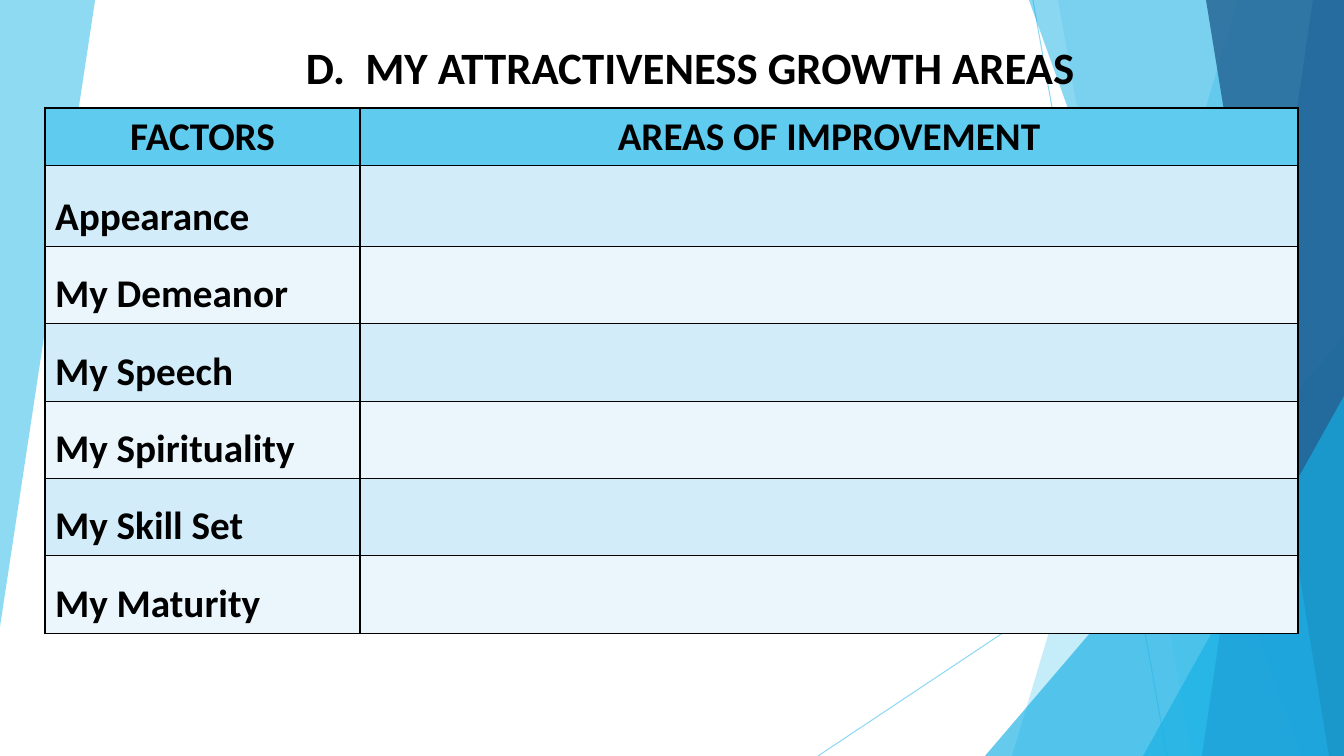
from lxml import etree
from pptx import Presentation
from pptx.dml.color import RGBColor
from pptx.enum import shapes, text
from pptx.oxml import ns
from pptx.util import Emu, Pt

# Content
TITLE = "D.  MY ATTRACTIVENESS GROWTH AREAS"
HEADERS = ("FACTORS", "AREAS OF IMPROVEMENT")
FACTORS = ("Appearance", "My Demeanor", "My Speech",
           "My Spirituality", "My Skill Set", "My Maturity")

BLACK = RGBColor(0x00, 0x00, 0x00)
SKY = RGBColor(0x5F, 0xCB, 0xEF)
CYAN = RGBColor(0x17, 0xB0, 0xE4)
BLUE = RGBColor(0x2E, 0x83, 0xC3)
NAVY = RGBColor(0x22, 0x62, 0x92)
BANDS = (RGBColor(0xD2, 0xEC, 0xF9), RGBColor(0xEA, 0xF6, 0xFC))

# Geometry in px
WIDTH, HEIGHT = 1344, 756
TITLE_BOX = (38, 35, 1305, 65)
TABLE_LEFT, TABLE_TOP = 45, 108
COLUMNS = (315, 938)
ROW_TOPS = (108, 165, 246, 323, 401, 478, 555, 633)

# Background facets, back to front: kind, points or box, colour, opacity in %
FACETS = (
    ("polygon", ((0, 0), (95, 0), (95, 1), (0, 627)), SKY, 70),
    ("line", (1033, 0, 1167, HEIGHT), SKY, 70),
    ("line", (WIDTH, 406, 818, HEIGHT), SKY, 70),
    ("polygon", ((1238, 0), (WIDTH, 0), (WIDTH, HEIGHT), (1012, HEIGHT)), SKY, 36),
    ("polygon", ((1058, 0), (WIDTH, 0), (WIDTH, HEIGHT), (1192, HEIGHT)), SKY, 20),
    ("triangle", (985, 336, 359, 420), CYAN, 66),
    ("polygon", ((1029, 0), (WIDTH, 0), (WIDTH, HEIGHT), (1301, HEIGHT)), CYAN, 50),
    ("polygon", ((1313, 0), (WIDTH, 0), (WIDTH, HEIGHT), (1202, HEIGHT)), BLUE, 70),
    ("polygon", ((1206, 0), (WIDTH, 0), (WIDTH, HEIGHT), (1329, HEIGHT)), NAVY, 80),
    ("triangle", (1143, 396, 201, 360), CYAN, 66),
)

SCALE = 914400 / 100.8


def px(*lengths):
    return [Emu(round(length * SCALE)) for length in lengths]


def write(frame, words, size=28, align=text.PP_ALIGN.LEFT):
    paragraph = frame.paragraphs[0]
    paragraph.alignment = align
    run = paragraph.add_run()
    run.text = words
    run.font.name = "Calibri"
    run.font.size = Pt(size)
    run.font.bold = True
    run.font.color.rgb = BLACK


def set_opacity(element, percent):
    colour = next(element.find(ns.qn("p:spPr")).iter(ns.qn("a:srgbClr")))
    etree.SubElement(colour, ns.qn("a:alpha"), val=str(percent * 1000))


def add_facet(canvas, kind, place, colour, opacity):
    if kind == "line":
        facet = canvas.add_connector(shapes.MSO_CONNECTOR.STRAIGHT, *px(*place))
        facet.line.color.rgb = colour
        facet.line.width = Pt(0.75)
        etree.SubElement(facet._element.spPr, ns.qn("a:effectLst"))
    else:
        if kind == "triangle":
            facet = canvas.add_shape(shapes.MSO_SHAPE.ISOSCELES_TRIANGLE, *px(*place))
            facet.adjustments[0] = 1
        else:
            outline = canvas.build_freeform(*place[0], scale=SCALE)
            outline.add_line_segments(place[1:], close=True)
            facet = outline.convert_to_shape()
        facet.shadow.inherit = False
        facet.fill.solid()
        facet.fill.fore_color.rgb = colour
        facet.line.fill.background()
    set_opacity(facet._element, opacity)


def style_cell(cell, colour):
    properties = cell._tc.get_or_add_tcPr()
    for side in ("lnL", "lnR", "lnT", "lnB"):
        border = etree.SubElement(properties, ns.qn("a:" + side), w=str(Pt(1)))
        fill = etree.SubElement(border, ns.qn("a:solidFill"))
        etree.SubElement(fill, ns.qn("a:srgbClr"), val=str(BLACK))
    cell.fill.solid()
    cell.fill.fore_color.rgb = colour


def main():
    deck = Presentation()
    deck.slide_width, deck.slide_height = px(WIDTH, HEIGHT)
    canvas = deck.slides.add_slide(deck.slide_layouts[6]).shapes

    # Background
    for facet in FACETS:
        add_facet(canvas, *facet)

    # Title
    title = canvas.add_textbox(*px(*TITLE_BOX)).text_frame
    title.word_wrap = True
    write(title, TITLE, size=32, align=text.PP_ALIGN.CENTER)

    # Table
    rows = [HEADERS] + [(factor, "") for factor in FACTORS]
    growth = canvas.add_table(
        len(rows), len(COLUMNS),
        *px(TABLE_LEFT, TABLE_TOP, sum(COLUMNS), ROW_TOPS[-1] - TABLE_TOP)).table
    for column, width in zip(growth.columns, px(*COLUMNS)):
        column.width = width
    for r, row in enumerate(rows):
        growth.rows[r].height = px(ROW_TOPS[r + 1] - ROW_TOPS[r])[0]
        for c, words in enumerate(row):
            cell = growth.cell(r, c)
            style_cell(cell, BANDS[(r - 1) % 2] if r else SKY)
            if words:
                cell.vertical_anchor = text.MSO_ANCHOR.BOTTOM
                write(cell.text_frame, words,
                      align=text.PP_ALIGN.LEFT if r else text.PP_ALIGN.CENTER)

    deck.save("out.pptx")


if __name__ == "__main__":
    main()
